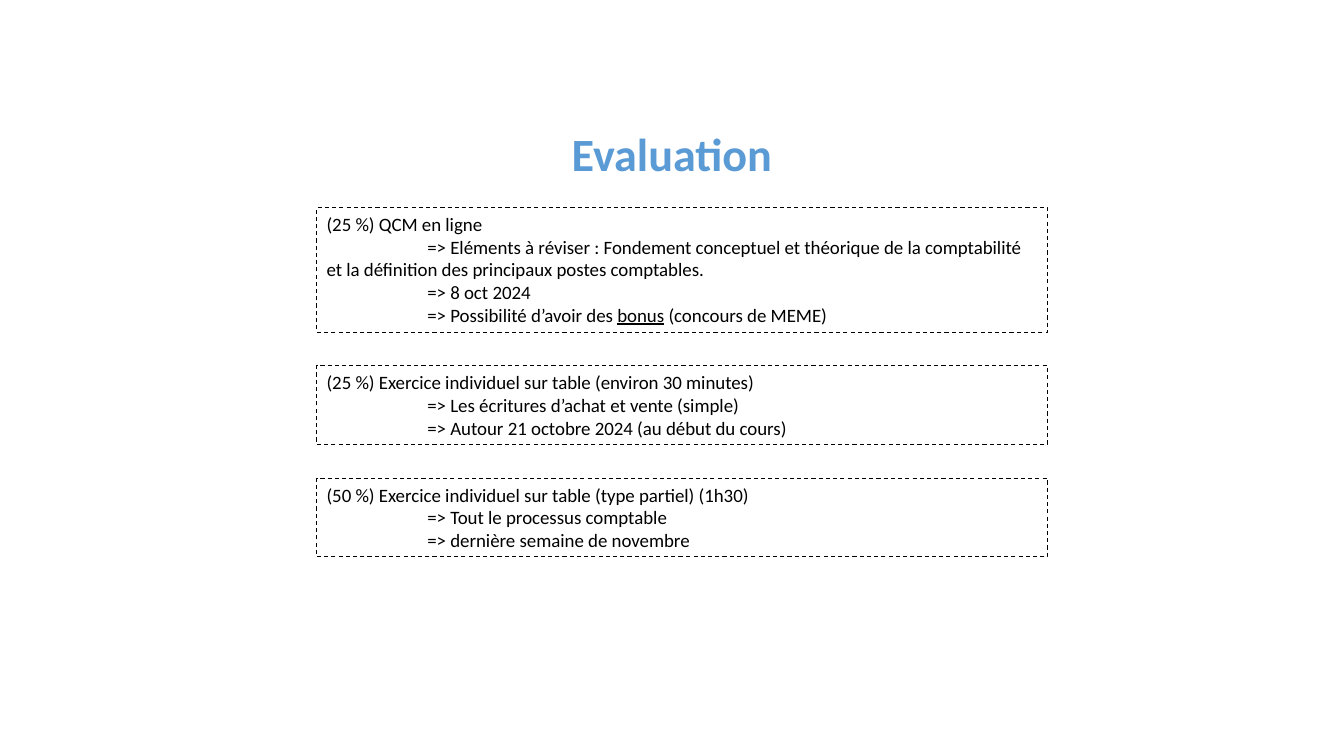
from pptx import Presentation
from pptx.dml.color import RGBColor
from pptx.enum import dml, shapes, text
from pptx.util import Cm, Pt

TITLE = "Evaluation"
# Each test: lines it takes up, heading, then details as (words, underlined) runs
TESTS = [
    (5, "(25 %) QCM en ligne", [
        [("=> Eléments à réviser : Fondement conceptuel et théorique de la comptabilité "
          "et la définition des principaux postes comptables.", False)],
        [("=> 8 oct 2024", False)],
        [("=> Possibilité d’avoir des ", False), ("bonus", True),
         (" (concours de MEME)", False)],
    ]),
    (3, "(25 %) Exercice individuel sur table (environ 30 minutes)", [
        [("=> Les écritures d’achat et vente (simple)", False)],
        [("=> Autour 21 octobre 2024 (au début du cours)", False)],
    ]),
    (3, "(50 %) Exercice individuel sur table (type partiel) (1h30)", [
        [("=> Tout le processus comptable", False)],
        [("=> dernière semaine de novembre", False)],
    ]),
]

BLUE = RGBColor(0x5B, 0x9B, 0xD5)
BLACK = RGBColor(0, 0, 0)
FONT = "Calibri"

BOX_LEFT, BOX_WIDTH, FIRST_TOP = Cm(7.98), Cm(18.42), Cm(5.23)
LINE_HEIGHT, BOX_PADDING, BOX_GAP = Cm(0.58), Cm(0.24), Cm(0.85)
DETAIL_INDENT = Cm(2.54)


def write(paragraph, words, size=13.5, color=BLACK, bold=False, underline=False,
          align=text.PP_ALIGN.LEFT, indent=0):
    """Append a run; indent moves only the first line of the paragraph."""
    paragraph.alignment = align
    properties = paragraph._p.get_or_add_pPr()
    properties.set("marL", "0")
    properties.set("indent", str(int(indent)))
    run = paragraph.add_run()
    run.text = words
    font = run.font
    font.name, font.size, font.bold, font.underline = FONT, Pt(size), bold, underline
    font.color.rgb = color


def add_test(slide, top, height, heading, details):
    box = slide.shapes.add_shape(shapes.MSO_SHAPE.RECTANGLE, BOX_LEFT, top, BOX_WIDTH, height)
    box.shadow.inherit = False
    box.fill.background()
    box.line.color.rgb = BLACK
    box.line.width = Pt(0.75)
    box.line.dash_style = dml.MSO_LINE.DASH
    frame = box.text_frame
    frame.word_wrap = True
    frame.vertical_anchor = text.MSO_ANCHOR.TOP
    frame.margin_right = Cm(0.4)
    write(frame.paragraphs[0], heading)
    for detail in details:
        paragraph = frame.add_paragraph()
        for words, underlined in detail:
            write(paragraph, words, underline=underlined, indent=DETAIL_INDENT)


def main():
    deck = Presentation()
    deck.slide_width, deck.slide_height = Cm(33.87), Cm(19.05)
    slide = deck.slides.add_slide(deck.slide_layouts[6])

    title = slide.shapes.add_textbox(Cm(8.36), Cm(2.67), Cm(17.15), Cm(2.39)).text_frame
    title.word_wrap = True
    title.vertical_anchor = text.MSO_ANCHOR.MIDDLE
    write(title.paragraphs[0], TITLE, size=33, color=BLUE, bold=True,
          align=text.PP_ALIGN.CENTER)

    top = FIRST_TOP
    for lines, heading, details in TESTS:
        height = lines * LINE_HEIGHT + BOX_PADDING
        add_test(slide, top, height, heading, details)
        top += height + BOX_GAP

    deck.save("out.pptx")


if __name__ == "__main__":
    main()
